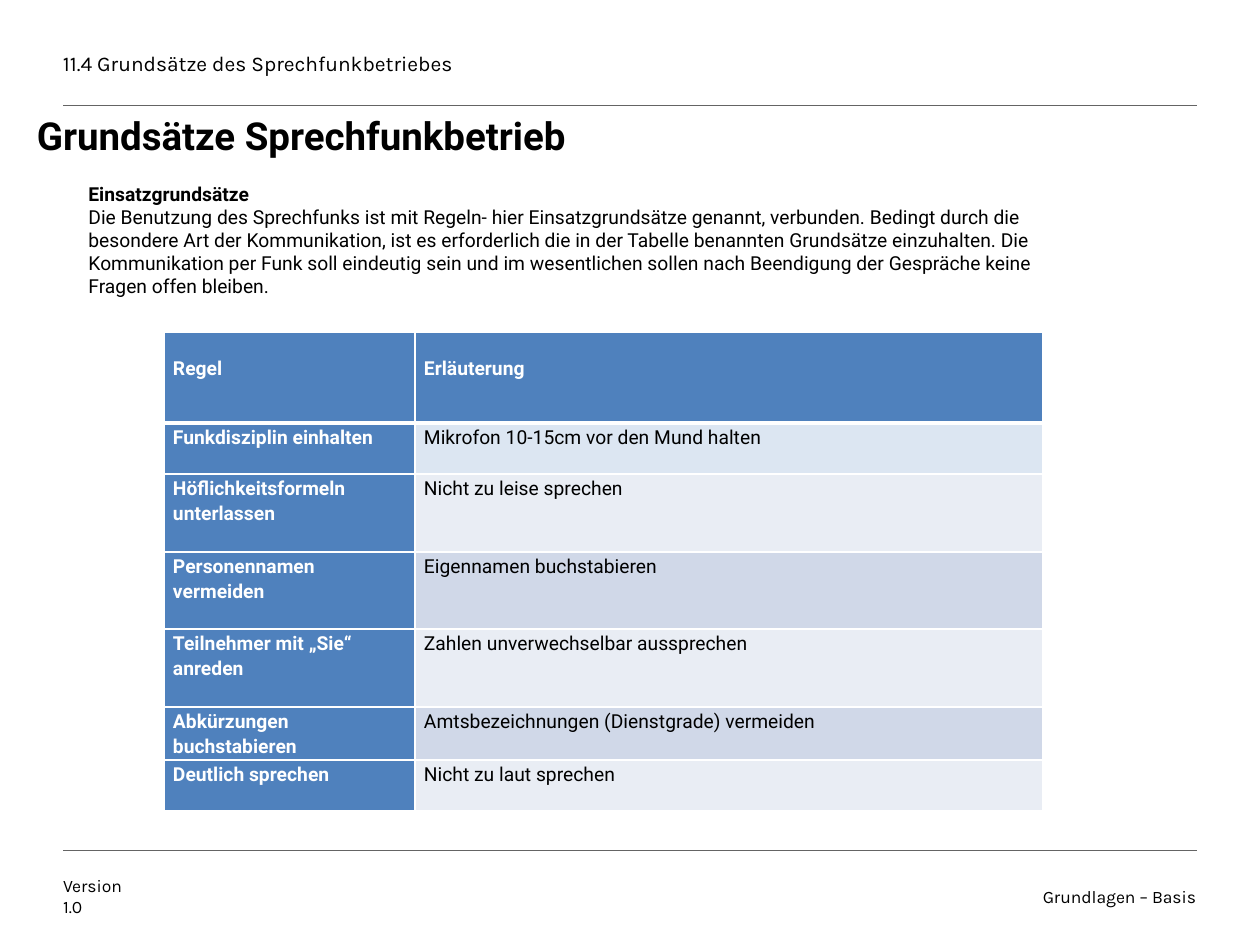
from dataclasses import dataclass

import pptx
import pptx.dml.color
import pptx.enum.shapes
import pptx.enum.text
import pptx.oxml
import pptx.oxml.ns
import pptx.util

RGB = pptx.dml.color.RGBColor
ALIGN = pptx.enum.text.PP_ALIGN
ANCHOR = pptx.enum.text.MSO_ANCHOR
BLACK = RGB(0x00, 0x00, 0x00)
WHITE = RGB(0xFF, 0xFF, 0xFF)
GREY = RGB(0x64, 0x64, 0x64)
BLUE = RGB(0x4F, 0x81, 0xBD)
PALE = RGB(0xDC, 0xE6, 0xF2)
LIGHT = RGB(0xE9, 0xED, 0xF4)
MID = RGB(0xD0, 0xD8, 0xE8)

SCALE = 914400 / 126  # EMU per px


@dataclass
class Label:
    box: tuple[int, int, int, int]
    lines: list[str]
    size: int
    font: str = "Karla"
    bold: bool = False
    align: ALIGN = ALIGN.LEFT
    anchor: ANCHOR = ANCHOR.MIDDLE
    pitch: int | None = None


@dataclass
class Rule:
    name: str
    note: str
    high: int
    fill: RGB


LABELS = [
    Label((63, 42, 766, 42), ["11.4 Grundsätze des Sprechfunkbetriebes"], 12),
    Label((63, 868, 71, 56), ["Version", "1.0"], 10),
    Label((1017, 868, 179, 56), ["Grundlagen – Basis"], 10, align=ALIGN.RIGHT),
    Label((37, 116, 930, 84), ["Grundsätze Sprechfunkbetrieb"], 22, "Roboto",
          True, anchor=ANCHOR.TOP, pitch=24),
]
RULES = [
    Rule("Funkdisziplin einhalten", "Mikrofon 10-15cm vor den Mund halten", 51, PALE),
    Rule("Höflichkeitsformeln unterlassen", "Nicht zu leise sprechen", 78, LIGHT),
    Rule("Personennamen vermeiden", "Eigennamen buchstabieren", 77, MID),
    Rule("Teilnehmer mit „Sie“ anreden", "Zahlen unverwechselbar aussprechen", 78, LIGHT),
    Rule("Abkürzungen buchstabieren", "Amtsbezeichnungen (Dienstgrade) vermeiden", 51, MID),
    Rule("Deutlich sprechen", "Nicht zu laut sprechen", 51, LIGHT),
]
INTRO = (
    "Die Benutzung des Sprechfunks ist mit Regeln- hier Einsatzgrundsätze genannt, "
    "verbunden. Bedingt durch die besondere Art der Kommunikation, ist es erforderlich "
    "die in der Tabelle benannten Grundsätze einzuhalten. Die Kommunikation per Funk "
    "soll eindeutig sein und im wesentlichen sollen nach Beendigung der Gespräche "
    "keine Fragen offen bleiben."
)
HEAD = 91  # height of the header row
COLS = (251, 628)


def px(num: int) -> pptx.util.Emu:
    return pptx.util.Emu(round(num * SCALE))


def add_run(para, text: str, size: int, font: str, bold: bool, color: RGB = BLACK) -> None:
    run = para.add_run()
    run.text = text
    run.font.size = pptx.util.Pt(size)
    run.font.name = font
    run.font.bold = bold
    run.font.color.rgb = color


def add_label(slide, label: Label) -> None:
    frame = slide.shapes.add_textbox(*map(px, label.box)).text_frame
    frame.word_wrap = True
    frame.vertical_anchor = label.anchor
    frame.margin_left = frame.margin_right = frame.margin_top = frame.margin_bottom = 0
    for num, line in enumerate(label.lines):
        para = frame.add_paragraph() if num else frame.paragraphs[0]
        para.alignment = label.align
        if label.pitch:
            para.line_spacing = pptx.util.Pt(label.pitch)
        add_run(para, line, label.size, label.font, label.bold)


def add_line(slide, top: int) -> None:
    line = slide.shapes.add_connector(
        pptx.enum.shapes.MSO_CONNECTOR.STRAIGHT, px(63), px(top), px(1197), px(top))
    line.line.color.rgb = GREY
    line.line.width = pptx.util.Pt(0.25)
    props = line._element.spPr
    props.append(props.makeelement(pptx.oxml.ns.qn("a:effectLst"), {}))


def add_edges(cell, top: int, base: int) -> None:
    props = cell._tc.get_or_add_tcPr()
    for spot, (side, width) in enumerate((("L", 1), ("R", 1), ("T", top), ("B", base))):
        props.insert(spot, pptx.oxml.parse_xml(
            f'<a:ln{side} {pptx.oxml.ns.nsdecls("a")} w="{pptx.util.Pt(width)}">'
            f'<a:solidFill><a:srgbClr val="{WHITE}"/></a:solidFill></a:ln{side}>'))


def fill_cell(cell, text: str, fill: RGB, bold: bool, top: int = 1,
              base: int = 1, inset: int = 0) -> None:
    cell.margin_left = cell.margin_right = px(9)
    cell.margin_top, cell.margin_bottom = px(inset), 0
    cell.fill.solid()
    cell.fill.fore_color.rgb = fill
    add_edges(cell, top, base)
    para = cell.text_frame.paragraphs[0]
    para.line_spacing = 1.15
    add_run(para, text, 11, "Roboto", bold, WHITE if bold else BLACK)


def add_rules(slide) -> None:
    highs = [HEAD] + [rule.high for rule in RULES]
    table = slide.shapes.add_table(
        len(highs), len(COLS), px(164), px(332), px(sum(COLS)), px(sum(highs))).table
    table.horz_banding = False
    for col, width in zip(table.columns, COLS):
        col.width = px(width)
    for row, high in zip(table.rows, highs):
        row.height = px(high)
    for col, text in enumerate(("Regel", "Erläuterung")):
        fill_cell(table.cell(0, col), text, BLUE, True, base=3, inset=22)
    for row, rule in enumerate(RULES, 1):
        top = 3 if row == 1 else 1
        fill_cell(table.cell(row, 0), rule.name, BLUE, True, top)
        fill_cell(table.cell(row, 1), rule.note, rule.fill, False, top)


def add_intro(slide) -> None:
    shape = slide.shapes.add_shape(
        pptx.enum.shapes.MSO_SHAPE.RECTANGLE, px(76), px(175), px(1012), px(130))
    shape.shadow.inherit = False
    shape.fill.solid()
    shape.fill.fore_color.rgb = WHITE
    shape.line.fill.background()
    frame = shape.text_frame
    frame.word_wrap = True
    frame.vertical_anchor = ANCHOR.MIDDLE
    first, body = frame.paragraphs[0], frame.add_paragraph()
    first.alignment = body.alignment = ALIGN.LEFT
    add_run(first, "Einsatzgrundsätze", 11, "Roboto", True)
    add_run(body, INTRO, 11, "Roboto", False)


def main() -> None:
    deck = pptx.Presentation()
    deck.slide_width, deck.slide_height = px(1260), px(945)
    slide = deck.slides.add_slide(deck.slide_layouts[6])
    # Header and footer lines
    for top in (105, 850):
        add_line(slide, top)
    # Header, footer and title
    for label in LABELS:
        add_label(slide, label)
    # Table and introduction
    add_rules(slide)
    add_intro(slide)
    deck.save("out.pptx")


if __name__ == "__main__":
    main()
